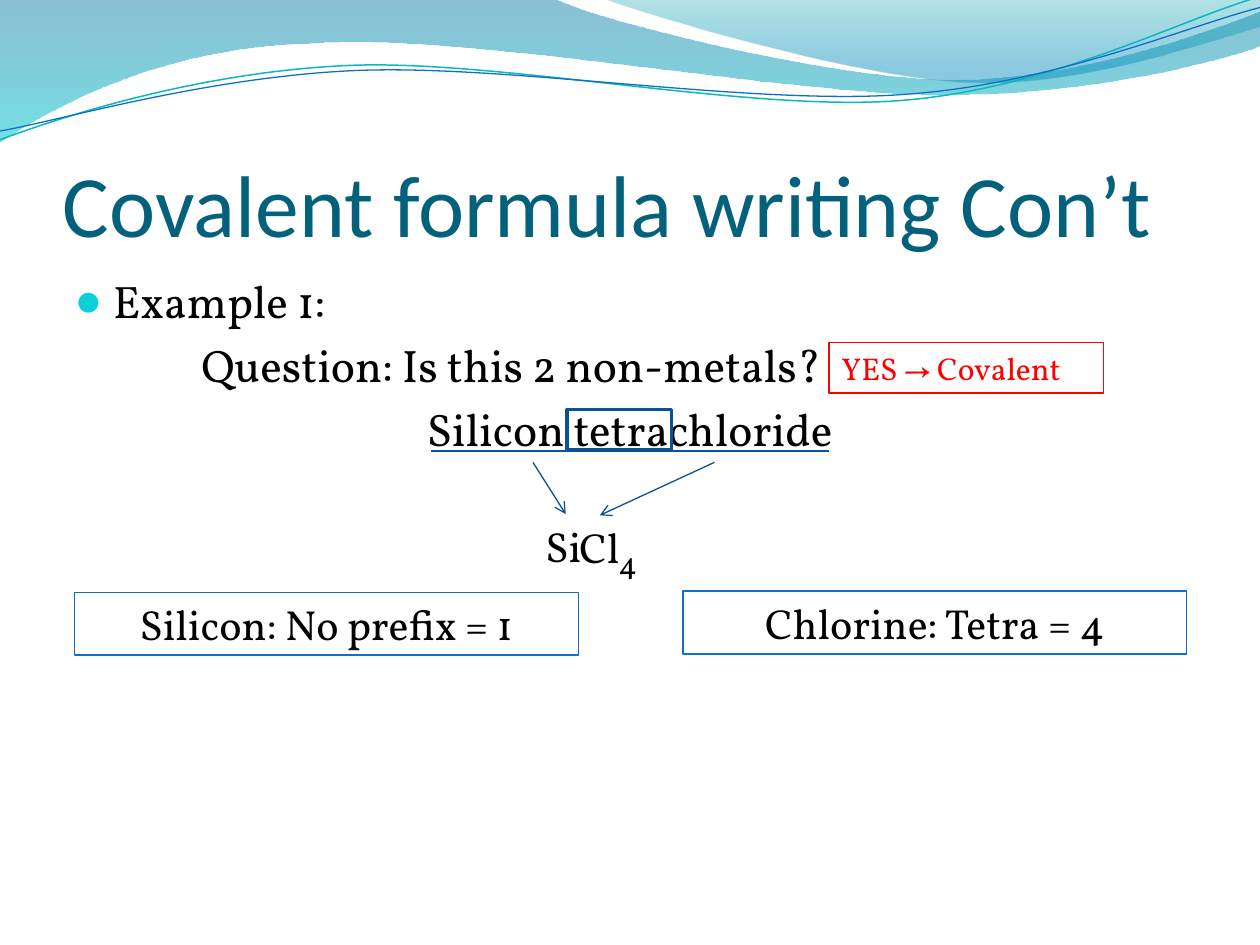
from lxml.etree import SubElement
from pptx import Presentation
from pptx.dml.color import RGBColor
from pptx.enum.shapes import MSO_CONNECTOR, MSO_SHAPE
from pptx.enum.text import MSO_ANCHOR, PP_ALIGN
from pptx.oxml.ns import qn
from pptx.util import Pt

PX = 9144  # 100 px to the inch
SERIF = "Vollkorn"
BLACK, RED, BLUE, NAVY = "000000", "FF0000", "0F6FC6", "095295"

# A corner is (x, y); a curve is two handles and an end (x, y, x, y, x, y).
BANDS = [
    ([(0, 0), (440, -1), (476, 17, 664, 63, 758, 63), (853, 63, 958, 26, 1000, 9),
      (1001, 36), (983, 44, 870, 76, 746, 75), (622, 75, 382, 28, 257, 34),
      (129, 36, 46, 83, -1, 113)],
     [(0, "0074A1", 45), (100, "00C6CF", 55)]),
    ([(479, -1), (509, 11, 682, 62, 769, 65), (856, 69, 961, 32, 1000, 21), (1000, 0)],
     [(0, "00A1A9", 30), (80, "008BBF", 45)]),
]
WAVES = [
    ([(0, 111), (48, 93, 158, 57, 277, 52), (395, 47, 593, 89, 713, 80),
      (833, 71, 938, 15, 998, -2)], "0AB8BF", 0.85),
    ([(0, 104), (47, 96, 164, 61, 283, 56), (403, 51, 597, 84, 717, 75),
      (836, 67, 941, 21, 1000, 6)], BLUE, 0.75),
]
TITLE = "Covalent formula writing Con’t"
BODY = [("Example 1:", PP_ALIGN.LEFT), ("\tQuestion: Is this 2 non-metals?", PP_ALIGN.LEFT),
        ("Silicon tetrachloride", PP_ALIGN.CENTER)]
FORMULA = [("Si", (423, 408, 52, 50), 24), ("Cl", (450, 409, 52, 50), 24),
           ("4", (481, 426, 52, 40), 18)]
LINES = [((423, 367, 449, 408), True), ((567, 367, 476, 409), True),
         ((342, 358, 449, 358), False), ((533, 358, 658, 358), False)]
BOXES = [
    ("Silicon: No prefix = 1", (59, 470, 400, 50), BLUE, 0.75, 24, BLACK, PP_ALIGN.CENTER),
    ("Chlorine: Tetra = 4", (542, 469, 400, 50), BLUE, 0.75, 24, BLACK, PP_ALIGN.CENTER),
    ("", (450, 325, 83, 32), "0B5292", 2, 24, BLACK, PP_ALIGN.CENTER),
    ("YES → Covalent", (658, 272, 218, 40), RED, 0.75, 18, RED, PP_ALIGN.LEFT),
]


def rgb(code):
    return RGBColor.from_string(code)


def emu(nums):
    return [round(n * PX) for n in nums]


def add(node, tag, **attrs):
    return SubElement(node, qn(tag), {k: str(v) for k, v in attrs.items()})


def draw(shapes, parts, close):
    """Join the part ends with straight lines, then bend those that have handles."""
    ends = [emu(part[-2:]) for part in parts]
    pen = shapes.build_freeform(*ends[0], scale=1.0)
    pen.add_line_segments(ends[1:], close=close)
    shape = pen.convert_to_shape()
    shape.shadow.inherit = False
    steps = list(shape._element.iter(qn("a:lnTo")))
    for step, part in zip(steps, parts[1:]):
        if len(part) == 6:
            step.tag = qn("a:cubicBezTo")
            step.remove(step[0])
            nums = emu(part)
            for x, y in zip(nums[::2], nums[1::2]):
                add(step, "a:pt", x=x - shape.left, y=y - shape.top)
    return shape


def shade(shape, stops):
    """Fill from top to bottom with (position, colour, opacity) stops."""
    shape.fill.gradient()
    grad = shape.fill._fill._gradFill
    for child in list(grad):
        grad.remove(child)
    row = add(grad, "a:gsLst")
    for pos, code, alpha in stops:
        stop = add(row, "a:gs", pos=pos * 1000)
        add(add(stop, "a:srgbClr", val=code), "a:alpha", val=alpha * 1000)
    add(grad, "a:lin", ang=5400000, scaled=0)
    shape.line.fill.background()


def stroke(line, code, width):
    line.color.rgb = rgb(code)
    line.width = Pt(width)


def write(para, text, size, code=BLACK, font=SERIF, align=PP_ALIGN.LEFT):
    para.alignment = align
    run = para.add_run()
    run.text = text
    for key, val in {"size": Pt(size), "name": font}.items():
        setattr(run.font, key, val)
    run.font.color.rgb = rgb(code)


def text_box(shapes, at, **style):
    frame = shapes.add_textbox(*emu(at)).text_frame
    for key, val in {"word_wrap": True, **style}.items():
        setattr(frame, key, val)
    return frame


def main():
    deck = Presentation()
    deck.slide_width, deck.slide_height = emu((1000, 750))
    shapes = deck.slides.add_slide(deck.slide_layouts[6]).shapes

    for parts, stops in BANDS:
        shade(draw(shapes, parts, True), stops)
    for parts, code, width in WAVES:
        wave = draw(shapes, parts, False)
        wave.fill.background()
        stroke(wave.line, code, width)

    head = text_box(shapes, (50, 77, 900, 125), vertical_anchor=MSO_ANCHOR.BOTTOM,
                    margin_left=0, margin_right=0, margin_bottom=0)
    write(head.paragraphs[0], TITLE, 50, "04617B", "Calibri")

    body = text_box(shapes, (50, 212, 900, 480))
    for i, (text, align) in enumerate(BODY):
        para = body.add_paragraph() if i else body.paragraphs[0]
        write(para, text, 26, align=align)
        props = para._p.get_or_add_pPr()
        add(add(props, "a:spcBef"), "a:spcPct", val=20000)
        if i == 0:
            props.set("marL", str(30 * PX))
            props.set("indent", str(-30 * PX))
            add(add(props, "a:buClr"), "a:srgbClr", val="0BD0D9")
            add(props, "a:buSzPct", val=95000)
            add(props, "a:buFont", typeface="Calibri")
            add(props, "a:buChar", char="●")
        if text.startswith("\t"):
            add(add(props, "a:tabLst"), "a:tab", pos=100 * PX, algn="l")

    for text, at, size in FORMULA:
        write(text_box(shapes, at).paragraphs[0], text, size)

    for ends, arrow in LINES:
        link = shapes.add_connector(MSO_CONNECTOR.STRAIGHT, *emu(ends))
        stroke(link.line, NAVY, 0.75)
        if arrow:
            add(link.line._get_or_add_ln(), "a:tailEnd", type="arrow")
        add(link._element.spPr, "a:effectLst")

    for text, at, edge, width, size, code, align in BOXES:
        box = shapes.add_shape(MSO_SHAPE.RECTANGLE, *emu(at))
        box.shadow.inherit = False
        box.fill.background()
        stroke(box.line, edge, width)
        if text:
            box.text_frame.vertical_anchor = MSO_ANCHOR.TOP
            write(box.text_frame.paragraphs[0], text, size, code, align=align)

    deck.save("out.pptx")


if __name__ == "__main__":
    main()
